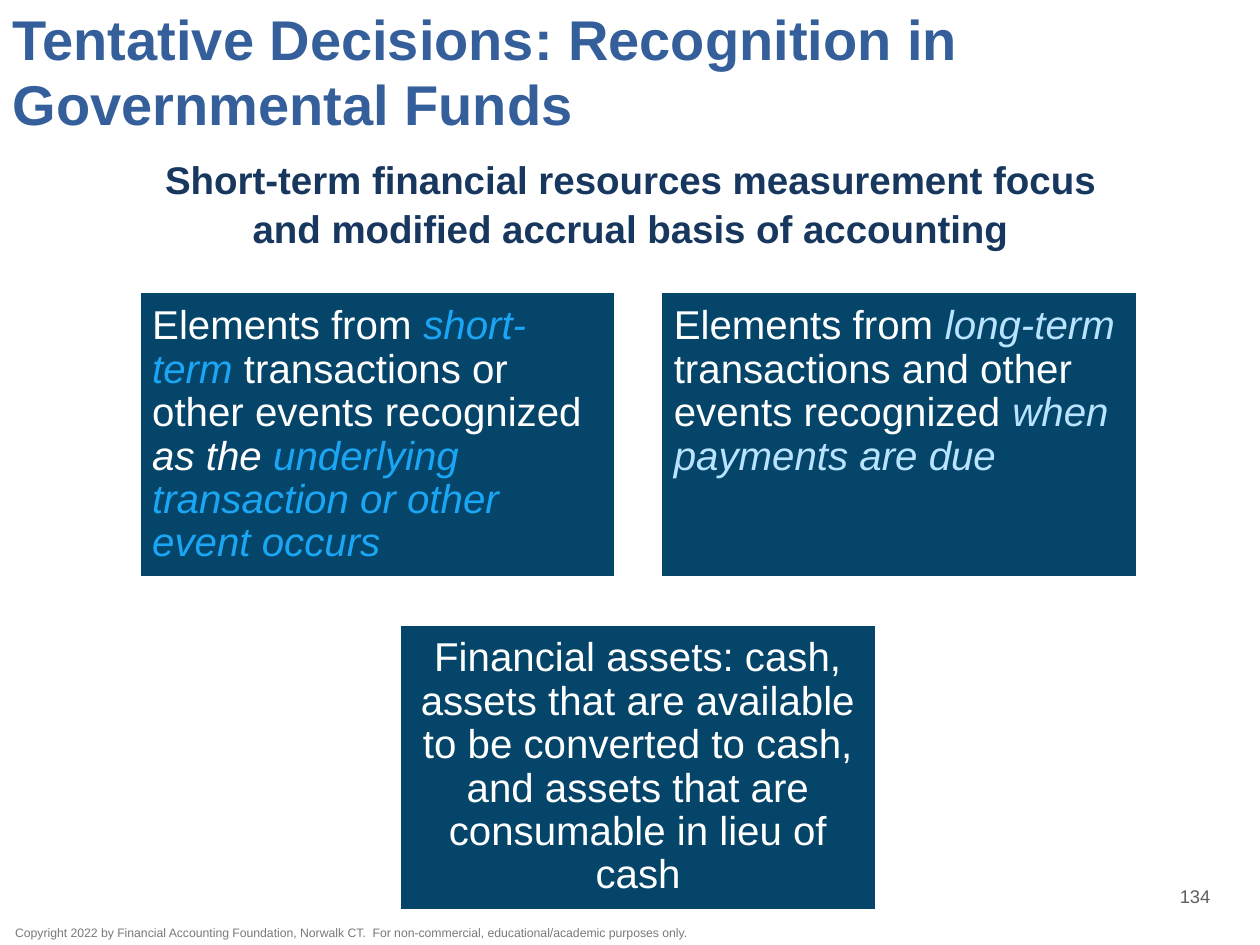
import pptx
import pptx.dml.color
import pptx.enum.shapes
import pptx.enum.text
import pptx.util

Inches, Pt = pptx.util.Inches, pptx.util.Pt
RGBColor = pptx.dml.color.RGBColor
ALIGN = pptx.enum.text.PP_ALIGN
ANCHOR = pptx.enum.text.MSO_ANCHOR

WHITE = RGBColor(0xFF, 0xFF, 0xFF)
PANEL = RGBColor(0x05, 0x45, 0x69)
BRIGHT = RGBColor(0x1A, 0xA6, 0xF4)
PALE = RGBColor(0xB8, 0xE4, 0xFF)
TITLE = RGBColor(0x35, 0x5F, 0x9A)
FOCUS = RGBColor(0x17, 0x37, 0x5E)
NUMBER = RGBColor(0x5F, 0x5F, 0x5F)
NOTICE = RGBColor(0x78, 0x79, 0x7B)

GRID_LEFT, GRID_TOP = 1.11, 2.32
PANEL_WIDTH, PANEL_HEIGHT = 3.77, 2.26
COLUMN_STEP, ROW_STEP = 4.14, 2.64

SHORT_TERM = [
    ("Elements from ", WHITE, False),
    ("short-term", BRIGHT, True),
    (" transactions or other events recognized ", WHITE, False),
    ("as the ", WHITE, True),
    ("underlying transaction or other event occurs", BRIGHT, True),
]
LONG_TERM = [
    ("Elements from ", WHITE, False),
    ("long-term", PALE, True),
    (" transactions and other events recognized ", WHITE, False),
    ("when payments are due", PALE, True),
]
ASSETS = [
    ("Financial assets: cash, assets that are available to be converted to cash, "
     "and assets that are consumable in lieu of cash", WHITE, False),
]


def apply(target, values):
    """Set each named attribute of the target."""
    for name, value in values.items():
        setattr(target, name, value)


def place(holder, left, top, width, height):
    """Position an element, in inches."""
    apply(holder, {"left": Inches(left), "top": Inches(top),
                   "width": Inches(width), "height": Inches(height)})


def write(holder, phrases, size, bold=False, align=ALIGN.LEFT, anchor=ANCHOR.TOP,
          insets=(0.1, 0.05, 0.1, 0.05), spacing=None):
    """Fill an element with one paragraph of (text, colour, italic) phrases."""
    frame = holder.text_frame
    sides = ("margin_left", "margin_top", "margin_right", "margin_bottom")
    apply(frame, {"word_wrap": True, "vertical_anchor": anchor,
                  "auto_size": pptx.enum.text.MSO_AUTO_SIZE.NONE})
    apply(frame, dict(zip(sides, map(Inches, insets))))
    paragraph = frame.paragraphs[0]
    apply(paragraph, {"alignment": align, "line_spacing": spacing})
    for text, colour, italic in phrases:
        run = paragraph.add_run()
        run.text = text
        apply(run.font, {"name": "Arial", "size": Pt(size), "bold": bold, "italic": italic})
        run.font.color.rgb = colour


def add_title(slide, text):
    """Move and fill the title placeholder."""
    heading = slide.shapes.title
    place(heading, 0, 0.08, 10, 0.98)
    write(heading, [(text, TITLE, False)], 32, bold=True, anchor=ANCHOR.MIDDLE,
          insets=(0.1, 0, 0, 0), spacing=Pt(37))


def add_label(slide, box, text, colour, size, **style):
    """Add a text box in a single colour."""
    label = slide.shapes.add_textbox(*map(Inches, box))
    write(label, [(text, colour, False)], size, **style)


def add_panel(slide, column, row, phrases, **style):
    """Add a filled panel at a grid column and row."""
    panel = slide.shapes.add_shape(
        pptx.enum.shapes.MSO_SHAPE.RECTANGLE,
        Inches(GRID_LEFT + column * COLUMN_STEP), Inches(GRID_TOP + row * ROW_STEP),
        Inches(PANEL_WIDTH), Inches(PANEL_HEIGHT))
    panel.shadow.inherit = False
    panel.fill.solid()
    panel.fill.fore_color.rgb = PANEL
    panel.line.color.rgb = WHITE
    panel.line.width = Pt(1)
    write(panel, phrases, 23, insets=(0.1,) * 4, spacing=0.9, **style)


def main():
    """Build and save the slide."""
    deck = pptx.Presentation()
    apply(deck, {"slide_width": Inches(10), "slide_height": Inches(7.5)})
    slide = deck.slides.add_slide(deck.slide_layouts.get_by_name("Title Only"))
    add_label(slide, (0.12, 7.34, 5.43, 0.14),
              "Copyright 2022 by Financial Accounting Foundation, Norwalk CT.  "
              "For non-commercial, educational/academic purposes only.",
              NOTICE, 7, insets=(0,) * 4)
    add_panel(slide, 0, 0, SHORT_TERM)
    add_panel(slide, 1, 0, LONG_TERM)
    add_panel(slide, 0.5, 1, ASSETS, align=ALIGN.CENTER, anchor=ANCHOR.MIDDLE)
    add_title(slide, "Tentative Decisions: Recognition in Governmental Funds")
    add_label(slide, (8.97, 6.95, 1.03, 0.33), "134", NUMBER, 10.5,
              align=ALIGN.CENTER, anchor=ANCHOR.MIDDLE)
    add_label(slide, (1.16, 1.16, 7.69, 1.05),
              "Short-term financial resources measurement focus "
              "and modified accrual basis of accounting",
              FOCUS, 22, bold=True, align=ALIGN.CENTER, spacing=1.07)
    deck.save("out.pptx")


if __name__ == "__main__":
    main()
